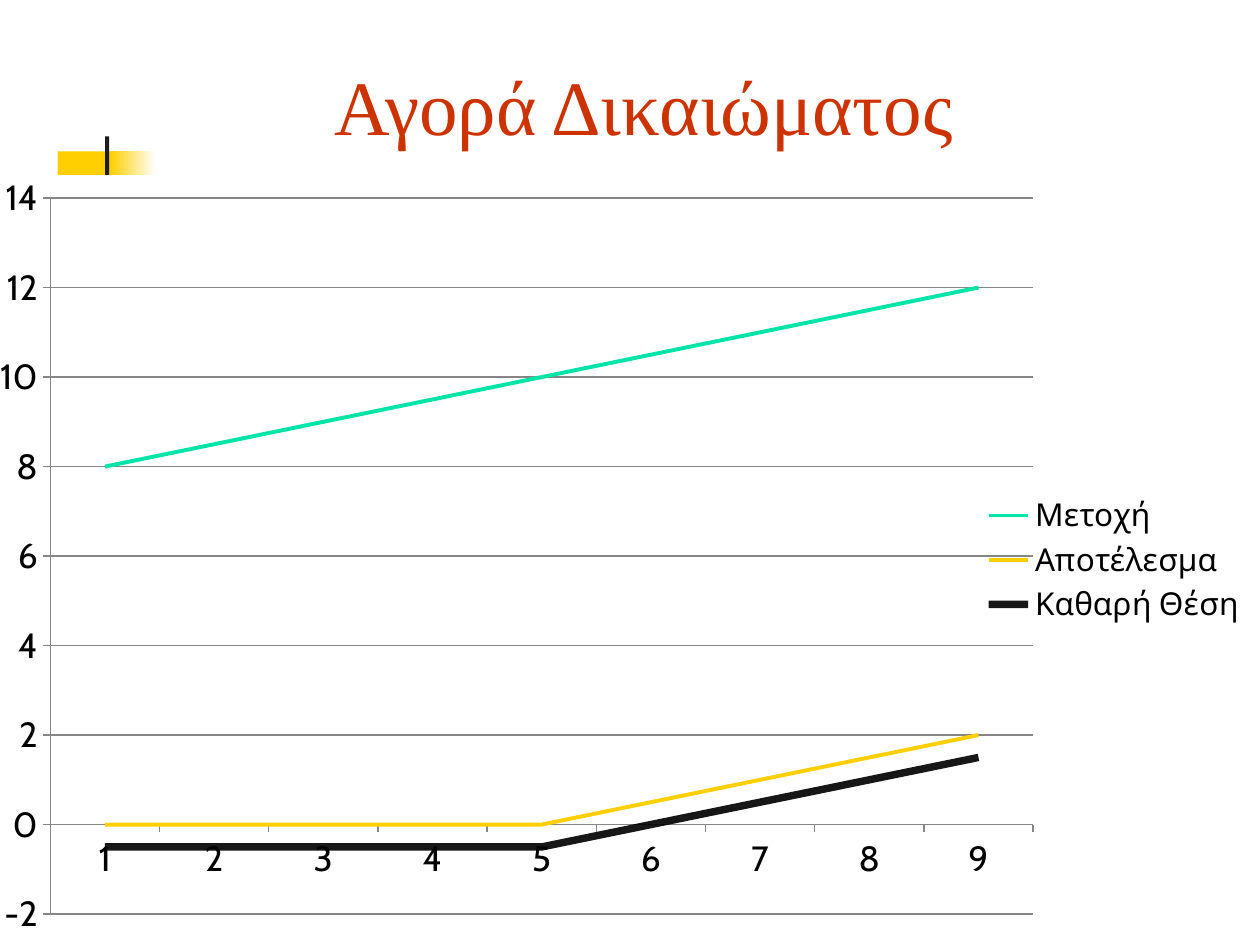
from dataclasses import dataclass

from lxml import etree
from pptx import Presentation
from pptx.chart.data import CategoryChartData
from pptx.dml.color import RGBColor
from pptx.enum import chart as charts, shapes, text
from pptx.oxml.ns import qn
from pptx.util import Pt


@dataclass(frozen=True)
class Theme:
    title_font: str = "Times New Roman"
    chart_font: str = "Cabin"
    title_size: int = 44
    axis_size: int = 20
    legend_size: int = 18
    title: str = "CC3300"
    yellow: str = "FFCF01"
    green: str = "00E4A8"
    dark: str = "1C1C1C"
    grid: str = "868686"
    black: str = "000000"
    white: str = "FFFFFF"


def rgb(value):
    return RGBColor.from_string(value)


def child(parent, tag, **attributes):
    return etree.SubElement(parent, qn(tag), attributes)


class SlideBuilder:
    def __init__(self, page, theme):
        self.page = page
        self.theme = theme

    def bar(self, left, top, width, height, color, fade_to=None):
        """Add a borderless rectangle, fading rightwards if fade_to is given."""
        box = self.page.shapes.add_shape(
            shapes.MSO_SHAPE.RECTANGLE, Pt(left), Pt(top), Pt(width), Pt(height))
        box.shadow.inherit = False
        box.line.fill.background()
        if fade_to is None:
            box.fill.solid()
            box.fill.fore_color.rgb = rgb(color)
            return
        box.fill.gradient()
        box.fill.gradient_angle = 0
        for stop, stop_color, position in zip(
                box.fill.gradient_stops, (color, fade_to), (0, 1)):
            stop.color.rgb = rgb(stop_color)
            stop.position = position

    def title(self, left, top, width, height, words):
        box = self.page.shapes.add_textbox(Pt(left), Pt(top), Pt(width), Pt(height))
        frame = box.text_frame
        frame.word_wrap = True
        frame.vertical_anchor = text.MSO_ANCHOR.BOTTOM
        frame.text = words
        para = frame.paragraphs[0]
        para.alignment = text.PP_ALIGN.CENTER
        font = para.runs[0].font
        font.name = self.theme.title_font
        font.size = Pt(self.theme.title_size)
        font.color.rgb = rgb(self.theme.title)

    def line_chart(self, left, top, width, height, categories, series, plot):
        """Add a line chart; series holds (name, values, color, width, opacity)."""
        data = CategoryChartData()
        data.categories = categories
        for name, values, *_ in series:
            data.add_series(name, values)
        chart = self.page.shapes.add_chart(
            charts.XL_CHART_TYPE.LINE, Pt(left), Pt(top), Pt(width), Pt(height),
            data).chart
        chart.has_title = False
        chart.font.name = self.theme.chart_font
        chart.font.size = Pt(10)
        chart.font.color.rgb = rgb(self.theme.black)
        chart.plots[0].vary_by_categories = False

        for line, (_, _, color, weight, opacity) in zip(chart.plots[0].series, series):
            line.smooth = False
            line.marker.style = charts.XL_MARKER_STYLE.NONE
            line.format.line.width = Pt(weight)
            line.format.line.color.rgb = rgb(color)
            if opacity < 100:
                paint = next(line.format.line._get_or_add_ln().iter(qn("a:srgbClr")))
                child(paint, "a:alpha", val=str(opacity * 1000))

        self.style_axes(chart)
        self.style_legend(chart)
        self.place_plot(chart, plot)
        self.fill_background(chart)

    def style_axes(self, chart):
        values = chart.value_axis
        values.minimum_scale, values.maximum_scale, values.major_unit = -2, 14, 2
        values.has_major_gridlines = True
        chart.category_axis.has_major_gridlines = False
        for axis in (chart.category_axis, values):
            axis.major_tick_mark = charts.XL_TICK_MARK.OUTSIDE
            axis.minor_tick_mark = charts.XL_TICK_MARK.NONE
            axis.tick_label_position = charts.XL_TICK_LABEL_POSITION.NEXT_TO_AXIS
            axis.tick_labels.font.size = Pt(self.theme.axis_size)
        for rule in (chart.category_axis, values, values.major_gridlines):
            rule.format.line.width = Pt(0.75)
            rule.format.line.color.rgb = rgb(self.theme.grid)

    def style_legend(self, chart):
        chart.has_legend = True
        chart.legend.position = charts.XL_LEGEND_POSITION.RIGHT
        chart.legend.include_in_layout = False
        chart.legend.font.size = Pt(self.theme.legend_size)

    def place_plot(self, chart, plot):
        """Fix the inner plot area, given as fractions of the chart."""
        area = chart._chartSpace.chart.plotArea
        for old in area.findall(qn("c:layout")):
            area.remove(old)
        layout = etree.Element(qn("c:layout"))
        area.insert(0, layout)
        manual = child(layout, "c:manualLayout")
        child(manual, "c:layoutTarget", val="inner")
        for mode in ("xMode", "yMode"):
            child(manual, f"c:{mode}", val="edge")
        for key, share in zip("xywh", plot):
            child(manual, f"c:{key}", val=str(share))

    def fill_background(self, chart):
        properties = etree.Element(qn("c:spPr"))
        fill = child(properties, "a:solidFill")
        child(fill, "a:srgbClr", val=self.theme.white)
        child(child(properties, "a:ln"), "a:noFill")
        chart._chartSpace.chart.addnext(properties)


def main():
    theme = Theme()
    deck = Presentation()
    deck.slide_width, deck.slide_height = Pt(720), Pt(540)
    slide = SlideBuilder(deck.slides.add_slide(deck.slide_layouts[6]), theme)

    slide.bar(33, 86.5, 34.5, 37.5, theme.yellow)
    slide.bar(63, 86.5, 26, 37.5, theme.yellow, fade_to=theme.white)
    slide.bar(60, 78, 2.4, 83, theme.dark)
    slide.title(42.5, 0, 662.5, 90, "Αγορά Δικαιώματος ")

    periods = range(1, 10)
    stock = [7.5 + period / 2 for period in periods]
    payoff = [max(price - 10, 0) for price in stock]
    net = [gain - 0.5 for gain in payoff]
    slide.line_chart(
        0, 100, 720, 440, [str(period) for period in periods],
        [("Μετοχή ", stock, theme.green, 2.25, 100),
         ("Αποτέλεσμα", payoff, theme.yellow, 2.25, 100),
         ("Καθαρή Θέση", net, theme.black, 4.25, 91)],
        plot=(0.04, 0.03, 0.78, 0.93))
    deck.save("out.pptx")


if __name__ == "__main__":
    main()
